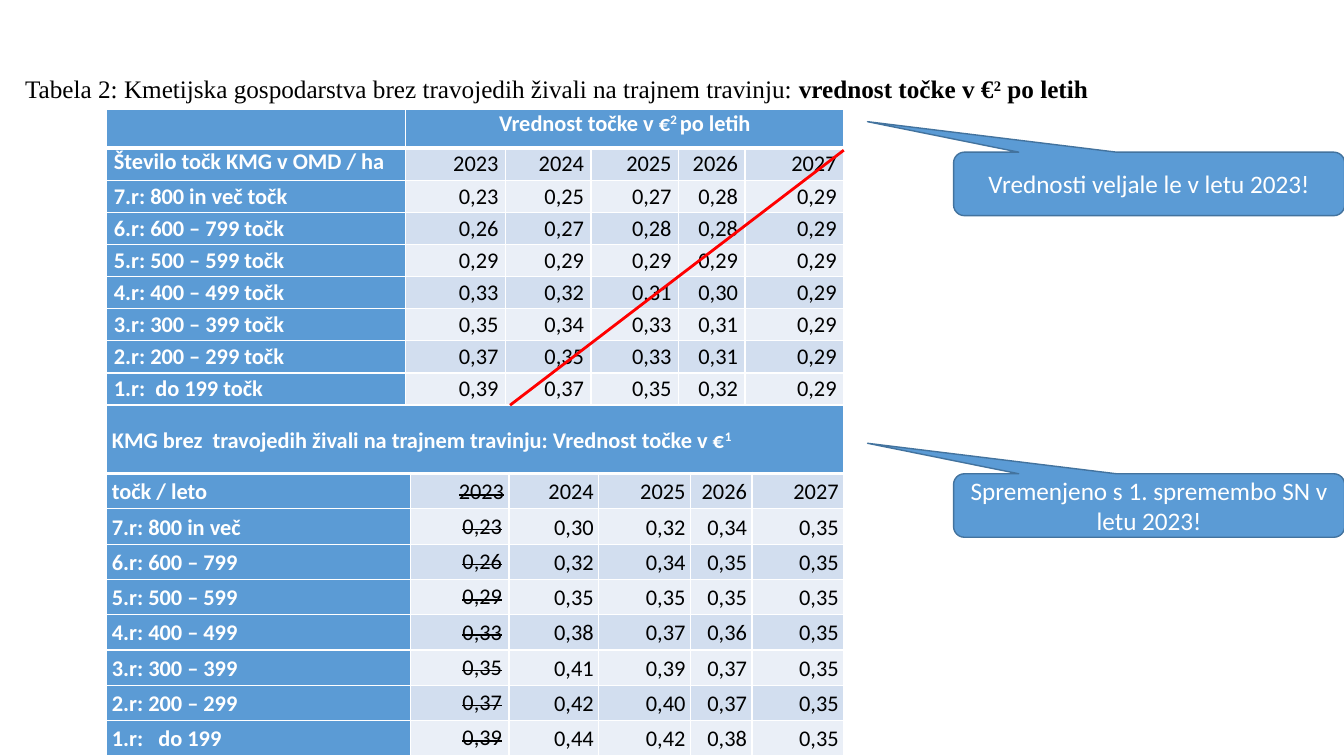
import lxml.etree
import pptx
import pptx.dml.color
import pptx.enum.shapes
import pptx.enum.text
import pptx.oxml.ns
import pptx.util

ALIGN = pptx.enum.text.PP_ALIGN
ANCHOR = pptx.enum.text.MSO_ANCHOR
POINT = pptx.util.Pt
SLIDE_WIDTH, SLIDE_HEIGHT = pptx.util.Inches(13.33), pptx.util.Inches(7.5)

COLORS = {
    "accent": "5B9BD5",
    "accent_line": "43739E",
    "band_dark": "D2DEEF",
    "band_light": "EAEFF7",
    "white": "FFFFFF",
    "black": "000000",
    "strike": "FF0000",
}
LABEL_FONT = {"name": "Calibri", "size": POINT(16), "bold": True, "color": "white"}
VALUE_FONT = {**LABEL_FONT, "bold": False, "color": "black"}
CALLOUT_FONT = {"name": "Calibri", "size": POINT(18), "color": "white"}
TITLE_FONT = {"name": "Times New Roman", "size": POINT(18), "color": "black"}

SPACED = {"space_before": POINT(0.9), "space_after": POINT(0.9)}
STRETCHED = {"line_spacing": 1.07}
WIDE_INSET, NARROW_INSET = pptx.util.Inches(0.07), pptx.util.Inches(0.05)

YEARS = "2023 2024 2025 2026 2027"
OLD_VALUES = {
    "Število točk KMG v OMD / ha": YEARS,
    "7.r: 800 in več točk": "0,23 0,25 0,27 0,28 0,29",
    "6.r: 600 – 799 točk": "0,26 0,27 0,28 0,28 0,29",
    "5.r: 500 – 599 točk": "0,29 0,29 0,29 0,29 0,29",
    "4.r: 400 – 499 točk": "0,33 0,32 0,31 0,30 0,29",
    "3.r: 300 – 399 točk": "0,35 0,34 0,33 0,31 0,29",
    "2.r: 200 – 299 točk": "0,37 0,35 0,33 0,31 0,29",
    "1.r:  do 199 točk": "0,39 0,37 0,35 0,32 0,29",
}
NEW_VALUES = {
    "točk / leto": YEARS,
    "7.r: 800 in več": "0,23 0,30 0,32 0,34 0,35",
    "6.r: 600 – 799": "0,26 0,32 0,34 0,35 0,35",
    "5.r: 500 – 599": "0,29 0,35 0,35 0,35 0,35",
    "4.r: 400 – 499": "0,33 0,38 0,37 0,36 0,35",
    "3.r: 300 – 399": "0,35 0,41 0,39 0,37 0,35",
    "2.r: 200 – 299": "0,37 0,42 0,40 0,37 0,35",
    "1.r:   do 199": "0,39 0,44 0,42 0,38 0,35",
}


def place(*percents):
    """Turn alternating x and y percentages of the slide into lengths."""
    sizes = (SLIDE_WIDTH, SLIDE_HEIGHT) * 2
    return [int(size * percent / 100) for size, percent in zip(sizes, percents)]


def rgb(color):
    return pptx.dml.color.RGBColor.from_string(COLORS[color])


def set_values(target, values):
    for name, value in values.items():
        setattr(target, name, value)


def fill_with(target, color):
    target.fill.solid()
    target.fill.fore_color.rgb = rgb(color)


def write(paragraph, parts, font, layout):
    """Add runs; each part is a text and the marks that set it apart."""
    set_values(paragraph, layout)
    for text, marks in parts:
        run = paragraph.add_run()
        run.text = text
        values = {**font, **marks}
        run.font.color.rgb = rgb(values.pop("color"))
        attributes = values.pop("attributes", {})
        set_values(run.font, values)
        for name, value in attributes.items():
            run._r.get_or_add_rPr().set(name, value)


RAISED = {"attributes": {"baseline": "30000"}}
STRUCK = {"attributes": {"strike": "sngStrike"}}


def add_border(cell, side, width):
    properties = cell._tc.get_or_add_tcPr()
    line = lxml.etree.SubElement(properties, pptx.oxml.ns.qn(f"a:ln{side}"), w=str(POINT(width)))
    fill = lxml.etree.SubElement(line, pptx.oxml.ns.qn("a:solidFill"))
    lxml.etree.SubElement(fill, pptx.oxml.ns.qn("a:srgbClr"), val=COLORS["white"])


def style_cell(cell, row, color, inset, anchor):
    set_values(cell, {"margin_left": inset, "margin_right": inset,
                      "margin_top": 0, "margin_bottom": 0, "vertical_anchor": anchor})
    widths = {"L": 1, "R": 1, "T": 3 if row == 1 else 1, "B": 3 if row == 0 else 1}
    for side, width in widths.items():
        add_border(cell, side, width)
    fill_with(cell, color)


def add_value_table(slide, box, column_shares, header_share, values, inset):
    """Build a table with a header row left free for its caption."""
    left, top, width, height = box
    table = slide.shapes.add_table(len(values) + 1, len(column_shares), *box).table
    for column, share in zip(table.columns, column_shares):
        column.width = int(width * share / sum(column_shares))
    header_height = int(height * header_share)
    for index, row in enumerate(table.rows):
        row.height = header_height if index == 0 else (height - header_height) // len(values)
    for column in range(len(column_shares)):
        style_cell(table.cell(0, column), 0, "accent", inset, ANCHOR.MIDDLE)
    return table


def add_old_table(slide, box):
    table = add_value_table(slide, box, [2.97, 0.99, 0.85, 0.87, 0.66, 0.98], 0.13,
                            OLD_VALUES, WIDE_INSET)
    caption = table.cell(0, 1)
    caption.merge(table.cell(0, 5))
    caption.vertical_anchor = ANCHOR.TOP
    write(caption.text_frame.paragraphs[0],
          [("Vrednost točke v €", {}), ("2 ", RAISED), ("po letih", {})],
          LABEL_FONT, {"alignment": ALIGN.CENTER, **SPACED})
    for row, (label, numbers) in enumerate(OLD_VALUES.items(), 1):
        band = "band_dark" if row % 2 else "band_light"
        for column, text in enumerate([label, *numbers.split()]):
            cell = table.cell(row, column)
            anchor = ANCHOR.TOP if (row, column) == (1, 0) else ANCHOR.MIDDLE
            style_cell(cell, row, band if column else "accent", WIDE_INSET, anchor)
            write(cell.text_frame.paragraphs[0], [(text, {})],
                  VALUE_FONT if column else LABEL_FONT,
                  {"alignment": ALIGN.RIGHT if column else ALIGN.LEFT, **SPACED})


def add_new_table(slide, box):
    table = add_value_table(slide, box, [3.01, 0.98, 0.89, 0.91, 0.61, 0.91], 0.195,
                            NEW_VALUES, NARROW_INSET)
    caption = table.cell(0, 0)
    caption.merge(table.cell(0, 5))
    write(caption.text_frame.paragraphs[0],
          [("KMG brez  travojedih živali na trajnem travinju: Vrednost točke v €", {}),
           ("1", RAISED)], LABEL_FONT, {"alignment": ALIGN.JUSTIFY, **STRETCHED})
    for row, (label, numbers) in enumerate(NEW_VALUES.items(), 1):
        band = "band_dark" if row % 2 else "band_light"
        for column, text in enumerate([label, *numbers.split()]):
            cell = table.cell(row, column)
            old_value = column == 1 and row > 1
            style_cell(cell, row, band if column else "accent",
                       WIDE_INSET if old_value else NARROW_INSET, ANCHOR.MIDDLE)
            write(cell.text_frame.paragraphs[0], [(text, STRUCK if column == 1 else {})],
                  VALUE_FONT if column else LABEL_FONT,
                  {"alignment": ALIGN.RIGHT if column else ALIGN.JUSTIFY,
                   **(SPACED if old_value else STRETCHED)})


def add_title(slide, box):
    frame = slide.shapes.add_textbox(*box).text_frame
    frame.word_wrap = True
    bold = {"bold": True}
    write(frame.paragraphs[0],
          [("Tabela 2: Kmetijska gospodarstva brez travojedih živali na trajnem travinju: ", {}),
           ("vrednost točke v €", bold), ("2", {**bold, **RAISED}), (" po letih", bold)],
          TITLE_FONT, SPACED)


def add_callout(slide, box, text):
    kind = pptx.enum.shapes.MSO_SHAPE.ROUNDED_RECTANGULAR_CALLOUT
    shape = slide.shapes.add_shape(kind, *box)
    shape.shadow.inherit = False
    for index, value in enumerate([-0.72, -0.98, 0.17]):
        shape.adjustments[index] = value
    fill_with(shape, "accent")
    shape.line.color.rgb = rgb("accent_line")
    shape.line.width = POINT(1)
    set_values(shape.text_frame, {"word_wrap": True, "vertical_anchor": ANCHOR.MIDDLE})
    write(shape.text_frame.paragraphs[0], [(text, {})], CALLOUT_FONT, {"alignment": ALIGN.CENTER})


def add_strike_line(slide, ends):
    line = slide.shapes.add_connector(pptx.enum.shapes.MSO_CONNECTOR.STRAIGHT, *ends)
    line.line.color.rgb = rgb("strike")
    line.line.width = POINT(2)
    lxml.etree.SubElement(line._element.spPr, pptx.oxml.ns.qn("a:effectLst"))


def main():
    presentation = pptx.Presentation()
    set_values(presentation, {"slide_width": SLIDE_WIDTH, "slide_height": SLIDE_HEIGHT})
    slide = presentation.slides.add_slide(presentation.slide_layouts[6])
    add_old_table(slide, place(7.95, 14.53, 54.83, 39.07))
    add_new_table(slide, place(7.95, 53.6, 54.83, 46.4))
    add_title(slide, place(1.13, 9.07, 87, 5.33))
    callouts = {62.67: "Spremenjeno s 1. spremembo SN v letu 2023!",
                20.13: "Vrednosti veljale le v letu 2023!"}
    for top, text in callouts.items():
        add_callout(slide, place(70.95, top, 29.1, 8.4), text)
    add_strike_line(slide, place(37.95, 53.6, 62.78, 19.87))
    presentation.save("out.pptx")


if __name__ == "__main__":
    main()
